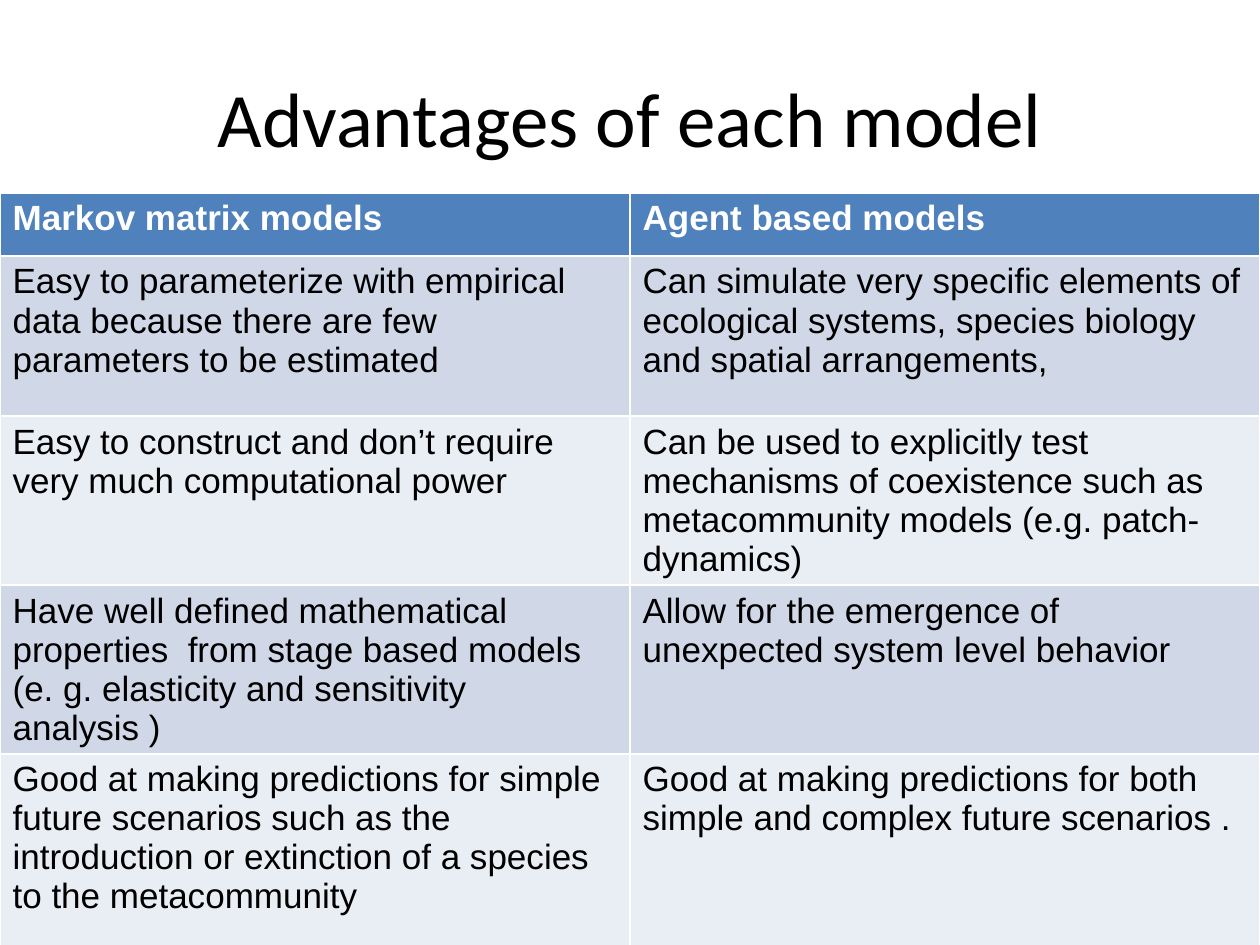
"""Build a slide comparing the advantages of two kinds of ecological model."""
from typing import NamedTuple

import pptx
import pptx.dml.color
import pptx.enum.text
import pptx.util

Cm = pptx.util.Cm
Pt = pptx.util.Pt


class Row(NamedTuple):
    height: float
    fill: str
    markov: str
    agent: str


HEADER, DARK, LIGHT = "4F81BD", "D0D8E8", "E9EDF4"
ROWS = [
    Row(1.27, HEADER, "Markov matrix models", "Agent based models"),
    Row(3.23, DARK,
        "Easy to parameterize with empirical data because there are few parameters to be estimated",
        "Can simulate very specific elements of ecological systems, species biology and spatial arrangements,"),
    Row(3.23, LIGHT,
        "Easy to construct and don’t require very much computational power",
        "Can be used to explicitly test mechanisms of coexistence such as metacommunity models (e.g. patch-dynamics)"),
    Row(3.23, DARK,
        "Have well defined mathematical properties  from stage based models (e. g. elasticity and sensitivity analysis )",
        "Allow for the emergence of unexpected system level behavior"),
    Row(4.22, LIGHT,
        "Good at making predictions for simple future scenarios such as the introduction or extinction of a species to the metacommunity",
        "Good at making predictions for both simple and complex future scenarios ."),
]


def rgb(value: str) -> pptx.dml.color.RGBColor:
    return pptx.dml.color.RGBColor.from_string(value)


def set_font(p, name: str, size: float, color: str, bold: bool = False) -> None:
    p.font.name = name
    p.font.size = Pt(size)
    p.font.bold = bold
    p.font.color.rgb = rgb(color)


def add_title(s, text: str) -> None:
    sp = s.shapes.title
    sp.left, sp.top, sp.width, sp.height = Cm(1.27), Cm(0.76), Cm(22.86), Cm(3.18)
    tf = sp.text_frame
    tf.text = text
    tf.vertical_anchor = pptx.enum.text.MSO_ANCHOR.MIDDLE
    p = tf.paragraphs[0]
    p.alignment = pptx.enum.text.PP_ALIGN.CENTER
    set_font(p, "Calibri", 44, "000000")


def add_comparison(s, rows: list[Row]) -> None:
    height = sum(row.height for row in rows)
    table = s.shapes.add_table(len(rows), 2, Cm(0), Cm(3.89), Cm(25.4), Cm(height)).table
    for i, row in enumerate(rows):
        table.rows[i].height = Cm(row.height)
        for cell, text in zip(table.rows[i].cells, (row.markov, row.agent)):
            cell.fill.solid()
            cell.fill.fore_color.rgb = rgb(row.fill)
            cell.text = text
            is_header = i == 0
            set_font(cell.text_frame.paragraphs[0], "Arial", 20,
                     "FFFFFF" if is_header else "000000", is_header)


def main() -> None:
    prs = pptx.Presentation()
    prs.slide_width, prs.slide_height = Cm(25.4), Cm(19.05)
    s = prs.slides.add_slide(prs.slide_layouts.get_by_name("Title Only"))
    add_title(s, "Advantages of each model")
    add_comparison(s, ROWS)
    prs.save("out.pptx")


if __name__ == "__main__":
    main()
